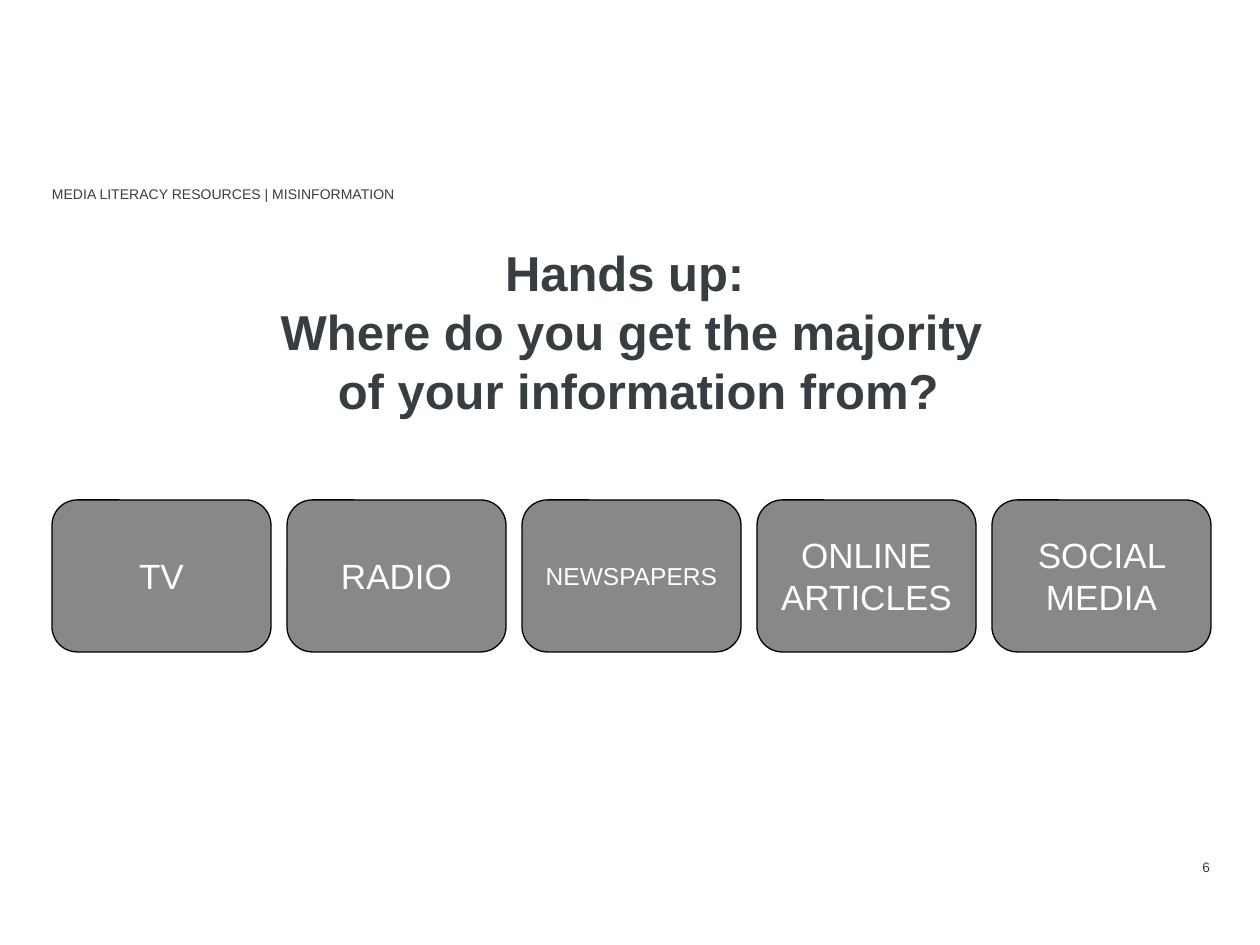
from dataclasses import dataclass

import pptx
import pptx.dml.color
import pptx.enum.shapes
import pptx.enum.text
import pptx.util

PX = 914400 / 126
FONT = "Arial"
COLORS = {"ink": "363E42", "tile": "888888", "outline": "000000", "label": "FFFFFF"}
ALIGN = pptx.enum.text.PP_ALIGN
ANCHOR = pptx.enum.text.MSO_ANCHOR

MARGIN = 52
CONTENT_WIDTH = 1159
TILE_WIDTH = 219
TILE_HEIGHT = 152
TILE_TOP = 500


@dataclass(frozen=True)
class Box:
    left: int
    top: int
    width: int
    height: int


@dataclass(frozen=True)
class Style:
    size: float
    color: str = "ink"
    bold: bool = False
    align: ALIGN = ALIGN.LEFT
    anchor: ANCHOR = ANCHOR.TOP
    inset: int = 0
    line_spacing: float | None = None


@dataclass(frozen=True)
class Source:
    label: str
    size: int = 20


SOURCES = [
    Source("TV"),
    Source("RADIO"),
    Source("NEWSPAPERS", 14),
    Source("ONLINE ARTICLES"),
    Source("SOCIAL MEDIA"),
]


def px(length: float) -> pptx.util.Emu:
    return pptx.util.Emu(round(length * PX))


def rgb(name: str) -> pptx.dml.color.RGBColor:
    return pptx.dml.color.RGBColor.from_string(COLORS[name])


def place(box: Box) -> tuple:
    return px(box.left), px(box.top), px(box.width), px(box.height)


def write(frame, lines: list[str], style: Style) -> None:
    """Fill a text frame with one paragraph per line."""
    frame.word_wrap = True
    frame.vertical_anchor = style.anchor
    frame.margin_left = frame.margin_right = px(style.inset)
    frame.margin_top = frame.margin_bottom = px(style.inset)
    for index, line in enumerate(lines):
        paragraph = frame.add_paragraph() if index else frame.paragraphs[0]
        paragraph.text = line
        paragraph.alignment = style.align
        if style.line_spacing:
            paragraph.line_spacing = style.line_spacing
        paragraph.font.name = FONT
        paragraph.font.size = pptx.util.Pt(style.size)
        paragraph.font.bold = style.bold
        paragraph.font.color.rgb = rgb(style.color)


def add_text(slide, box: Box, lines: list[str], style: Style) -> None:
    write(slide.shapes.add_textbox(*place(box)).text_frame, lines, style)


def add_tile(slide, box: Box, source: Source) -> None:
    tile = slide.shapes.add_shape(
        pptx.enum.shapes.MSO_SHAPE.ROUNDED_RECTANGLE, *place(box)
    )
    tile.shadow.inherit = False
    tile.fill.solid()
    tile.fill.fore_color.rgb = rgb("tile")
    tile.line.color.rgb = rgb("outline")
    tile.line.width = pptx.util.Pt(0.75)
    style = Style(source.size, "label", align=ALIGN.CENTER, anchor=ANCHOR.MIDDLE, inset=13)
    write(tile.text_frame, [source.label], style)


def main() -> None:
    deck = pptx.Presentation()
    deck.slide_width, deck.slide_height = px(1260), px(945)
    slide = deck.slides.add_slide(deck.slide_layouts[6])

    add_text(slide, Box(MARGIN, 186, 882, 25),
             ["MEDIA LITERACY RESOURCES | MISINFORMATION"], Style(8))
    add_text(slide, Box(1061, 860, 150, 18), ["6"],
             Style(7.8, align=ALIGN.RIGHT, anchor=ANCHOR.MIDDLE, inset=1, line_spacing=0.8))
    add_text(slide, Box(MARGIN, 243, CONTENT_WIDTH, 115),
             ["Hands up: \vWhere do you get the majority", " of your information from?"],
             Style(28, bold=True, align=ALIGN.CENTER))

    pitch = (CONTENT_WIDTH - TILE_WIDTH) // (len(SOURCES) - 1)
    for index, source in enumerate(SOURCES):
        add_tile(slide, Box(MARGIN + index * pitch, TILE_TOP, TILE_WIDTH, TILE_HEIGHT), source)

    deck.save("out.pptx")


if __name__ == "__main__":
    main()
